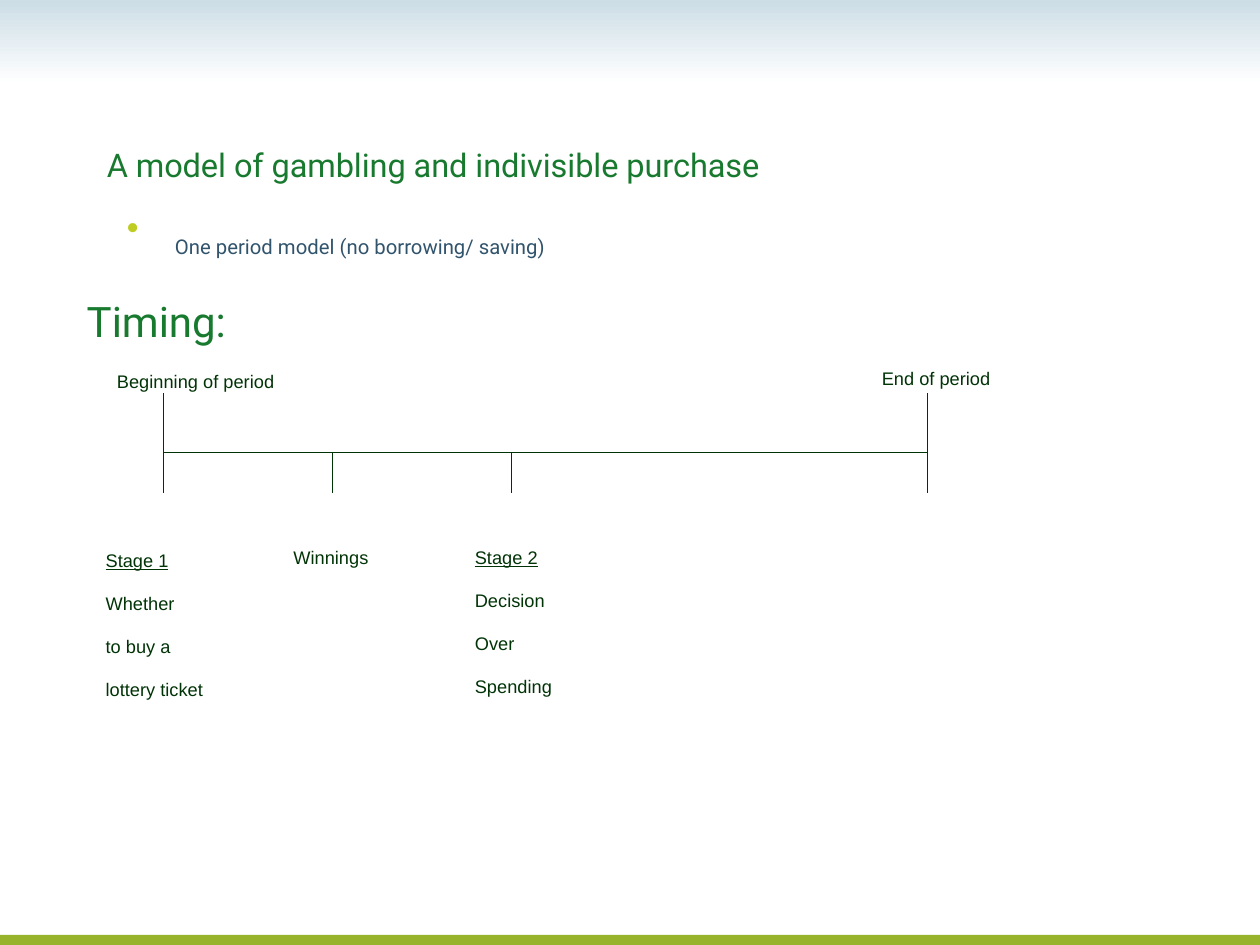
from dataclasses import dataclass
from lxml.etree import SubElement
from pptx import Presentation
from pptx.dml.color import RGBColor
from pptx.enum.shapes import MSO_CONNECTOR, MSO_SHAPE
from pptx.enum.text import MSO_ANCHOR, MSO_AUTO_SIZE
from pptx.oxml.ns import qn
from pptx.util import Inches, Pt


@dataclass(frozen=True)
class Theme:
    sky: RGBColor = RGBColor.from_string("CCDDE6")
    white: RGBColor = RGBColor.from_string("FFFFFF")
    footer: RGBColor = RGBColor.from_string("97B32C")
    heading: RGBColor = RGBColor.from_string("187A2E")
    body: RGBColor = RGBColor.from_string("31546D")
    ink: RGBColor = RGBColor.from_string("003306")
    bullet: str = "BFCC22"
    heading_font: str = "Roboto"
    label_font: str = "Arial"
    heading_size: int = 32
    timing_size: int = 24
    body_size: int = 20
    label_size: int = 18
    line_width: float = 0.75


theme = Theme()
deck = Presentation()
deck.slide_width, deck.slide_height = Inches(10), Inches(7.5)
page = deck.slides.add_slide(deck.slide_layouts[6])
column = deck.slide_width / 100
row = deck.slide_height / 75


def place(left, top, width, height):
    return [round(left * column), round(top * row), round(width * column), round(height * row)]


def add_text(area, lines, font, size, color, lowered=True):
    box = page.shapes.add_textbox(*place(*area))
    frame = box.text_frame
    frame.text = "\n".join(lines)
    for para in frame.paragraphs:
        for span in para.runs:
            span.font.name = font
            span.font.size = Pt(size)
            span.font.color.rgb = color
            if lowered:
                span.font._element.set("baseline", "-25000")
    return frame


header = page.shapes.add_shape(MSO_SHAPE.RECTANGLE, *place(0, 0, 100, 6.7))
header.fill.gradient()
header.fill.gradient_angle = 270
for stop, color, position in zip(header.fill.gradient_stops, (theme.sky, theme.white), (0, 1)):
    stop.color.rgb = color
    stop.position = position
footer = page.shapes.add_shape(MSO_SHAPE.RECTANGLE, *place(0, 74.2, 100, 0.8))
footer.fill.solid()
footer.fill.fore_color.rgb = theme.footer
for band in (header, footer):
    band.line.fill.background()
    band.shadow.inherit = False

headings = [
    ((5.9, 15.5, 85, 12.5), "Timing:", theme.timing_size, False),
    ((7.5, 2.1, 85, 12.5), "A model of gambling and indivisible purchase", theme.heading_size, True),
]
for area, words, size, lowered in headings:
    frame = add_text(area, [words], theme.heading_font, size, theme.heading, lowered)
    frame.word_wrap = True
    frame.vertical_anchor = MSO_ANCHOR.BOTTOM
    frame.paragraphs[0].line_spacing = 0.9

frame = add_text((9.1, 16.2, 85, 12.5), ["One period model (no borrowing/ saving)"],
                 theme.heading_font, theme.body_size, theme.body)
frame.word_wrap = True
para = frame.paragraphs[0]
properties = para._p.get_or_add_pPr()
properties.set("marL", str(Inches(0.38)))
properties.set("indent", str(-Inches(0.38)))
bullet_color = SubElement(properties, qn("a:buClr"))
SubElement(bullet_color, qn("a:srgbClr"), val=theme.bullet)
SubElement(properties, qn("a:buChar"), char="•")
para.line_spacing = 0.95

start, winnings, spending, end = 13, 26.4, 40.6, 73.6
high, axis, low = 31.2, 35.9, 39.1
timeline = [(start, axis, end, axis)]
timeline += [(mark, high, mark, low) for mark in (start, end)]
timeline += [(mark, axis, mark, low) for mark in (winnings, spending)]
for x1, y1, x2, y2 in timeline:
    line = page.shapes.add_connector(
        MSO_CONNECTOR.STRAIGHT,
        round(x1 * column), round(y1 * row), round(x2 * column), round(y2 * row))
    line.line.color.rgb = theme.ink
    line.line.width = Pt(theme.line_width)
    SubElement(line._element.spPr, qn("a:effectLst"))

labels = [
    ((8.3, 27.2, 16.4, 3), ["Beginning of period"]),
    ((69, 27, 12, 3), ["End of period"]),
    ((7.4, 41.4, 11, 9.1), ["Stage 1", "Whether", "to buy a", "lottery ticket"]),
    ((22.3, 41.2, 8.9, 3), ["Winnings"]),
    ((36.7, 41.2, 9.1, 9.1), ["Stage 2", "Decision", "Over", "Spending"]),
]
for area, lines in labels:
    frame = add_text(area, lines, theme.label_font, theme.label_size, theme.ink)
    frame.word_wrap = False
    frame.auto_size = MSO_AUTO_SIZE.SHAPE_TO_FIT_TEXT
    if len(lines) > 1:
        frame.paragraphs[0].runs[0].font.underline = True

deck.save("out.pptx")
